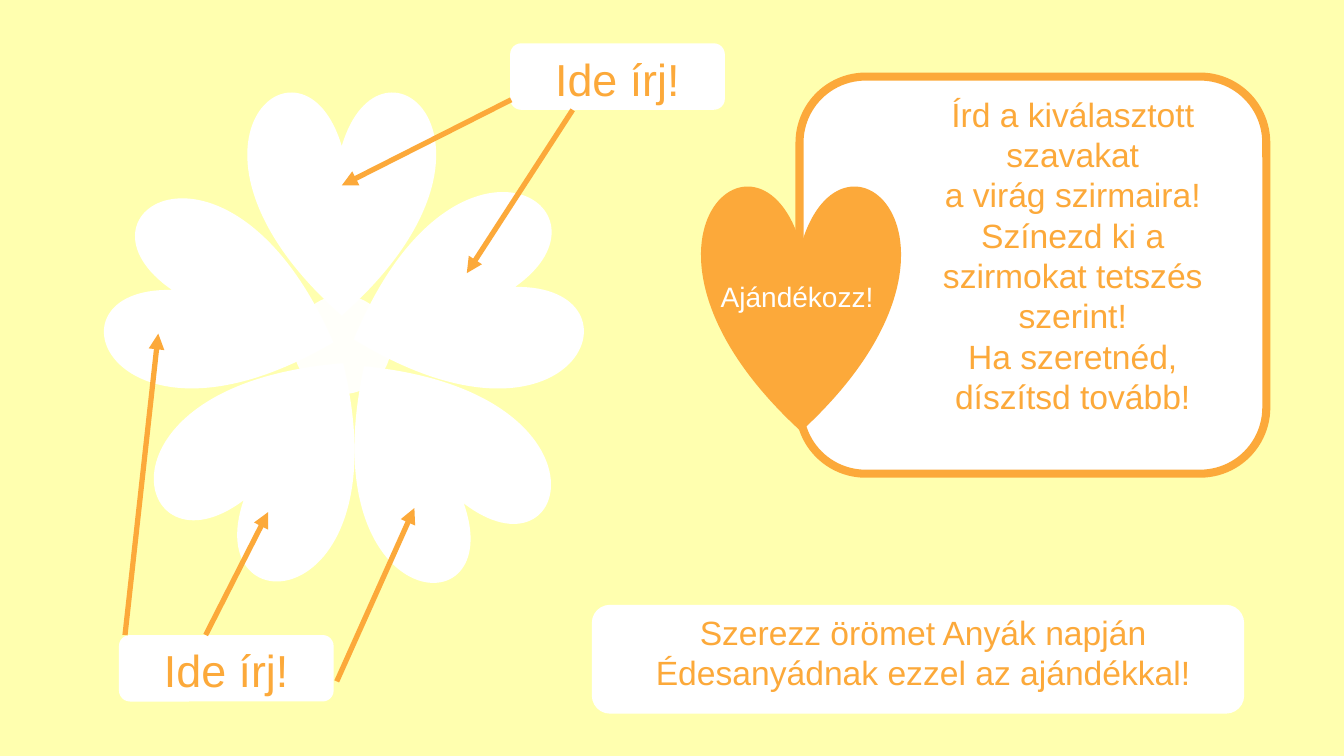
import pptx
import pptx.util
import pptx.dml.color
import pptx.enum.shapes
import pptx.enum.text
import pptx.oxml
import pptx.oxml.ns

Inches = pptx.util.Inches
Pt = pptx.util.Pt
RGB = pptx.dml.color.RGBColor.from_string
SHAPE = pptx.enum.shapes.MSO_SHAPE
ANCHOR = pptx.enum.text.MSO_ANCHOR
ALIGN = pptx.enum.text.PP_ALIGN
NS = pptx.oxml.ns.nsdecls("a")
COLORS = {"page": "FFFFAF", "orange": "FCA93A", "white": "FFFFFF"}


def add_solid(parent, kind, place, color="white"):
    """Add a shape with a plain fill, no outline and no shadow."""
    shape = parent.add_shape(kind, *[Inches(length) for length in place])
    shape.shadow.inherit = False
    shape.fill.solid()
    shape.fill.fore_color.rgb = RGB(COLORS[color])
    shape.line.fill.background()
    return shape


def write(box, lines, size, color="orange", align=ALIGN.CENTER, anchor=ANCHOR.MIDDLE, indent=0):
    """Fill a box with one paragraph per line, indented from the left in inches."""
    frame = box.text_frame
    frame.vertical_anchor = anchor
    for number, line in enumerate(lines):
        para = frame.add_paragraph() if number else frame.paragraphs[0]
        para.alignment = align
        if indent:
            para._p.get_or_add_pPr().set("marL", str(Inches(indent)))
        span = para.add_run()
        span.text = line
        span.font.name = "Arial"
        span.font.size = Pt(size)
        span.font.color.rgb = RGB(COLORS[color])


deck = pptx.Presentation()
deck.slide_width = Inches(13.33)
deck.slide_height = Inches(7.5)
page = deck.slides.add_slide(deck.slide_layouts[6])
page.background.fill.solid()
page.background.fill.fore_color.rgb = RGB(COLORS["page"])
shapes = page.shapes

# Instruction card with the gift heart
card = add_solid(shapes, SHAPE.ROUNDED_RECTANGLE, (7.93, 0.76, 4.63, 3.94))
card.line.color.rgb = RGB(COLORS["orange"])
card.line.width = Pt(5.75)
card.text_frame.word_wrap = True
card.text_frame.margin_bottom = Inches(0.45)
write(card, [
    "Írd a kiválasztott szavakat",
    "a virág szirmaira!",
    "Színezd ki a szirmokat tetszés szerint!",
    "Ha szeretnéd, díszítsd tovább!",
], 24, indent=0.79)

add_solid(shapes, SHAPE.HEART, (6.96, 1.82, 1.97, 2.46), "orange")
gift = shapes.add_textbox(Inches(7.05), Inches(2.72), Inches(1.76), Inches(0.44))
gift.text_frame.word_wrap = True
write(gift, ["Ajándékozz!"], 20, "white", ALIGN.LEFT, ANCHOR.TOP)

# Flower: five petals, a fifth of a turn apart
flower = shapes.add_group_shape()
petals = [
    (3, 1.78, 3.39, 1.93),
    (4, 1.31, 1.93, 1.86),
    (2, 3.34, 3.42, 1.86),
    (0, 2.46, 0.89, 1.86),
    (1, 3.61, 1.9, 1.93),
]
for turn, left, top, width in petals:
    petal = add_solid(flower.shapes, SHAPE.HEART, (left, top, width, 2.24))
    petal.rotation = turn * 72

center = add_solid(shapes, SHAPE.FLOWCHART_CONNECTOR, (2.91, 2.93, 0.97, 0.98))
center_color = center._element.spPr.find(".//" + pptx.oxml.ns.qn("a:srgbClr"))
center_color.append(pptx.oxml.parse_xml(f'<a:alpha {NS} val="95000"/>'))

# Labels and their arrows to the petals
labels = [
    (5.06, 0.43, [(5.07, 0.99, 3.39, 1.84), (5.68, 1.09, 4.63, 2.71)]),
    (1.18, 6.3, [(3.34, 6.76, 4.11, 5.04), (1.24, 6.3, 1.57, 3.31), (2.04, 6.3, 2.66, 5.08)]),
]
for left, top, arrows in labels:
    label = add_solid(shapes, SHAPE.ROUNDED_RECTANGLE, (left, top, 2.13, 0.66))
    write(label, ["Ide írj!"], 32, anchor=ANCHOR.TOP)
    for ends in arrows:
        arrow = shapes.add_connector(
            pptx.enum.shapes.MSO_CONNECTOR.STRAIGHT, *[Inches(length) for length in ends])
        arrow.line.color.rgb = RGB(COLORS["orange"])
        arrow.line.width = Pt(3.75)
        arrow.line._get_or_add_ln().append(
            pptx.oxml.parse_xml(f'<a:tailEnd {NS} type="triangle"/>'))
        arrow._element.spPr.append(pptx.oxml.parse_xml(f"<a:effectLst {NS}/>"))

# Closing message
message = add_solid(shapes, SHAPE.ROUNDED_RECTANGLE, (5.87, 6, 6.47, 1.08))
message.text_frame.word_wrap = True
message.text_frame.margin_top = 0
message.text_frame.margin_bottom = Inches(0.14)
write(message, ["Szerezz örömet Anyák napján Édesanyádnak ezzel az ajándékkal!"], 24, indent=0.1)

deck.save("out.pptx")
